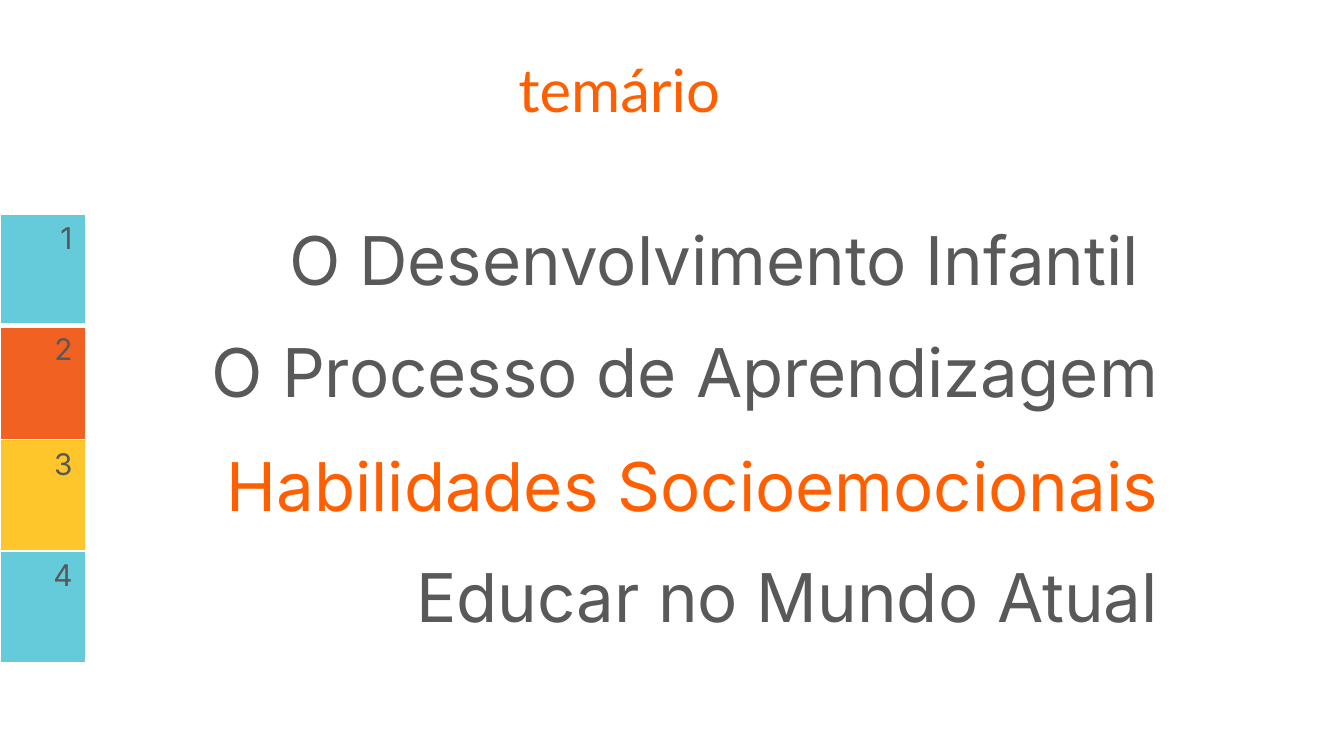
"""Build the agenda slide with a title and four numbered topics."""
from lxml import etree
from pptx import Presentation
from pptx.dml.color import RGBColor
from pptx.enum.text import MSO_ANCHOR, MSO_AUTO_SIZE, PP_ALIGN
from pptx.oxml.ns import qn
from pptx.util import Inches, Pt

TOP = MSO_ANCHOR.TOP
GROW = MSO_AUTO_SIZE.SHAPE_TO_FIT_TEXT
CENTER, RIGHT = PP_ALIGN.CENTER, PP_ALIGN.RIGHT

COLORS = {
    "white": "FFFFFF",
    "cyan": "65CADA",
    "red": "F16122",
    "yellow": "FFC62C",
    "number": "585858",
    "topic": "595959",
    "accent": "FF5F00",
}
HEADING = "temário "
TOPICS = [
    ("O Desenvolvimento Infantil ", "cyan", "topic"),
    ("O Processo de Aprendizagem", "red", "topic"),
    ("Habilidades Socioemocionais", "yellow", "accent"),
    ("Educar no Mundo Atual", "cyan", "topic"),
]
SLIDE_WIDTH = 10
SLIDE_HEIGHT = SLIDE_WIDTH * 9 / 16
HEADING_BOX = {"left": 1.91, "top": 0.34, "width": 5.51, "height": 0.64}
AGENDA_TOP = 1.59
COLUMNS = (0.64, 8.08)
ROWS = (0.83, 0.85, 0.83, 0.83)
THIN, THICK = 1, 3


def rgb(name):
    return RGBColor.from_string(COLORS[name])


def write(frame, text, font, size, color, align):
    paragraph = frame.paragraphs[0]
    paragraph.alignment = align
    run = paragraph.add_run()
    run.text = text
    for key, value in {"name": font, "size": Pt(size), "bold": False}.items():
        setattr(run.font, key, value)
    run.font.color.rgb = rgb(color)


def set_borders(cell, widths):
    properties = cell._tc.get_or_add_tcPr()
    for position, (side, width) in enumerate(widths.items()):
        line = etree.Element(qn(f"a:ln{side}"), w=str(Pt(width)))
        fill = etree.SubElement(line, qn("a:solidFill"))
        etree.SubElement(fill, qn("a:srgbClr"), val=COLORS["white"])
        properties.insert(position, line)


def add_heading(slide):
    heading = slide.shapes.title
    for key, value in HEADING_BOX.items():
        setattr(heading, key, Inches(value))
    frame = heading.text_frame
    layout = {"word_wrap": True, "auto_size": GROW, "vertical_anchor": TOP}
    for key, value in layout.items():
        setattr(frame, key, value)
    write(frame, HEADING, "Lato", 32, "accent", CENTER)


def add_agenda(slide):
    area = [Inches(v) for v in (0, AGENDA_TOP, sum(COLUMNS), sum(ROWS))]
    agenda = slide.shapes.add_table(len(ROWS), len(COLUMNS), *area).table
    agenda.first_row = agenda.horz_banding = False
    for column, width in zip(agenda.columns, COLUMNS):
        column.width = Inches(width)
    for row, height in zip(agenda.rows, ROWS):
        row.height = Inches(height)
    for index, (topic, fill, color) in enumerate(TOPICS):
        entries = [(str(index + 1), 16, "number", fill), (topic, 36, color, "white")]
        widths = {
            "L": THIN,
            "R": THIN,
            "T": THICK if index == 1 else THIN,
            "B": THICK if index == 0 else THIN,
        }
        for column, (text, size, text_color, background) in enumerate(entries):
            cell = agenda.cell(index, column)
            cell.vertical_anchor = TOP
            cell.fill.solid()
            cell.fill.fore_color.rgb = rgb(background)
            write(cell.text_frame, text, "Inter", size, text_color, RIGHT)
            set_borders(cell, widths)


def main():
    deck = Presentation()
    deck.slide_width = Inches(SLIDE_WIDTH)
    deck.slide_height = Inches(SLIDE_HEIGHT)
    slide = deck.slides.add_slide(deck.slide_layouts[5])
    add_heading(slide)
    add_agenda(slide)
    deck.save("out.pptx")


if __name__ == "__main__":
    main()
